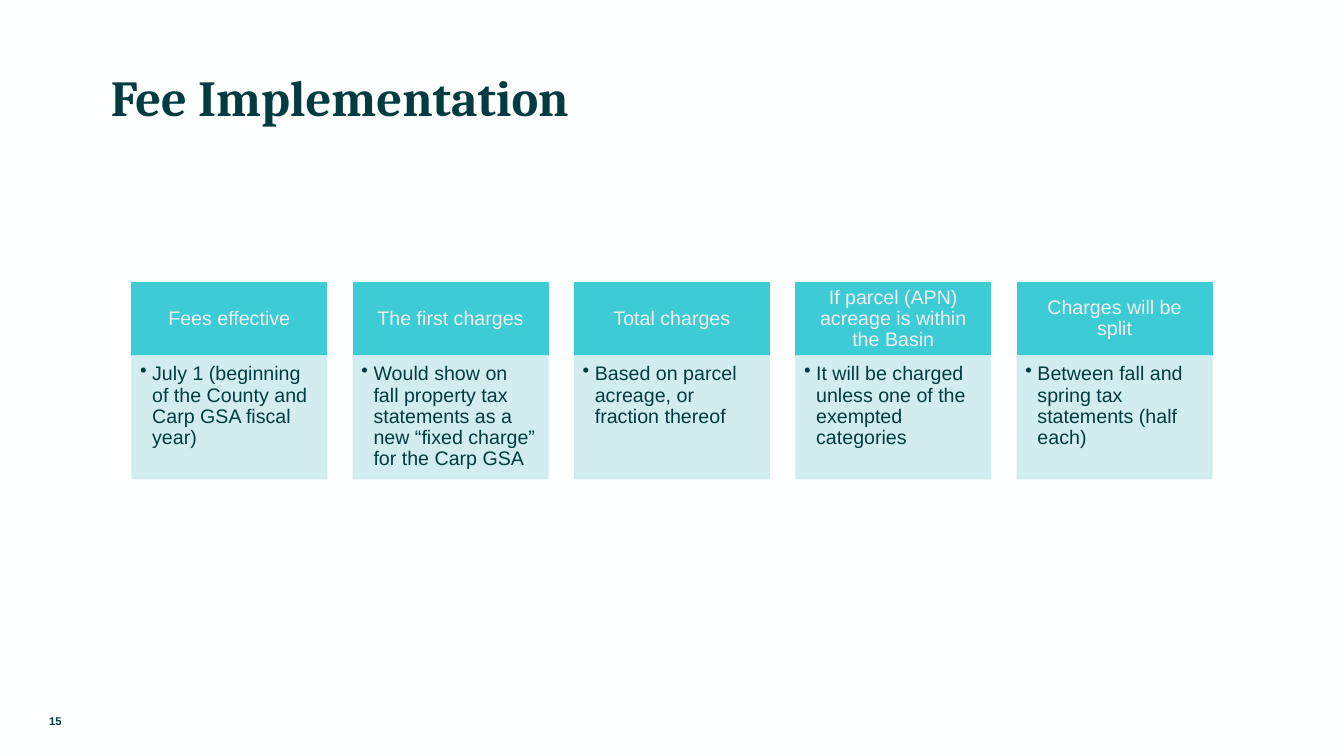
from lxml import etree
from pptx import Presentation
from pptx.dml.color import RGBColor
from pptx.enum.shapes import MSO_SHAPE
from pptx.enum.text import MSO_ANCHOR, PP_ALIGN
from pptx.oxml.ns import qn
from pptx.util import Inches, Pt

RECTANGLE = MSO_SHAPE.RECTANGLE
TOP, MIDDLE = MSO_ANCHOR.TOP, MSO_ANCHOR.MIDDLE
LEFT, CENTER = PP_ALIGN.LEFT, PP_ALIGN.CENTER

COLORS = {
    "background": "FEFFFF",
    "dark": "023B40",
    "header": "3DCCD5",
    "header_text": "F0F0F0",
    "detail": "CEECEF",
}

FEE_STEPS = [
    ("Fees effective",
     "July 1 (beginning of the County and Carp GSA fiscal year)"),
    ("The first charges",
     "Would show on fall property tax statements as a new “fixed charge” for the Carp GSA"),
    ("Total charges",
     "Based on parcel acreage, or fraction thereof"),
    ("If parcel (APN) acreage is within the Basin",
     "It will be charged unless one of the exempted categories"),
    ("Charges will be split",
     "Between fall and spring tax statements (half each)"),
]


def rgb(name):
    """Return the named palette colour."""
    return RGBColor.from_string(COLORS[name])


def write_text(holder, text, *, size, color="dark", font="Arial", bold=False, align=LEFT,
               anchor=MIDDLE, insets=(0.1, 0.05, 0.1, 0.05), spacing=1.0, bullet_indent=None):
    """Write one formatted paragraph into a shape or text box."""
    frame = holder.text_frame
    frame.word_wrap = True
    frame.vertical_anchor = anchor
    (frame.margin_left, frame.margin_top,
     frame.margin_right, frame.margin_bottom) = map(Inches, insets)
    paragraph = frame.paragraphs[0]
    paragraph.alignment = align
    paragraph.line_spacing = spacing
    run = paragraph.add_run()
    run.text = text
    run.font.name = font
    run.font.size = Pt(size)
    run.font.bold = bold
    run.font.color.rgb = rgb(color)
    if bullet_indent:
        properties = paragraph._p.get_or_add_pPr()
        properties.set("marL", str(Inches(bullet_indent)))
        properties.set("indent", str(-Inches(bullet_indent)))
        etree.SubElement(properties, qn("a:buChar")).set("char", "•")


def add_label(slide, box, text, **text_format):
    """Add a text box at the given box in inches."""
    label = slide.shapes.add_textbox(*map(Inches, box))
    write_text(label, text, **text_format)


def add_panel(slide, box, color, opacity=100):
    """Add a rectangle whose fill and outline share a colour and opacity."""
    panel = slide.shapes.add_shape(RECTANGLE, *map(Inches, box))
    panel.shadow.inherit = False
    panel.fill.solid()
    panel.fill.fore_color.rgb = rgb(color)
    panel.line.color.rgb = rgb(color)
    panel.line.width = Pt(1)
    if opacity < 100:
        for tint in panel._element.spPr.iter(qn("a:srgbClr")):
            etree.SubElement(tint, qn("a:alpha")).set("val", str(opacity * 1000))
    return panel


def add_fee_step(slide, box, heading, detail, header_height=0.73):
    """Stack a heading panel above its bulleted detail panel."""
    left, top, width, height = box
    header = add_panel(slide, (left, top, width, header_height), "header")
    write_text(header, heading, size=14, color="header_text", align=CENTER,
               insets=(0.11, 0.06, 0.11, 0.06), spacing=0.9)
    body = add_panel(slide, (left, top + header_height, width, height - header_height),
                     "detail", opacity=90)
    write_text(body, detail, size=14, anchor=TOP, insets=(0.08, 0.08, 0.11, 0.12),
               spacing=0.9, bullet_indent=0.12)


def add_fee_steps(slide, box, step_width=1.93):
    """Spread the fee steps evenly across the box."""
    left, top, width, height = box
    pitch = (width - step_width) / (len(FEE_STEPS) - 1)
    for index, (heading, detail) in enumerate(FEE_STEPS):
        add_fee_step(slide, (left + index * pitch, top, step_width, height), heading, detail)


def main():
    """Build and save the fee implementation slide."""
    deck = Presentation()
    deck.slide_width, deck.slide_height = Inches(13.33), Inches(7.5)
    slide = deck.slides.add_slide(deck.slide_layouts[6])
    slide.background.fill.solid()
    slide.background.fill.fore_color.rgb = rgb("background")
    add_label(slide, (1.1, 0.15, 11.13, 1.41), "Fee Implementation", size=36,
              font="Cambria", bold=True, insets=(0, 0.21, 0, 0))
    add_fee_steps(slide, (1.31, 2.8, 10.71, 1.95))
    add_label(slide, (0, 6.95, 1.1, 0.4), "15", size=8, bold=True, align=CENTER)
    deck.save("out.pptx")


if __name__ == "__main__":
    main()
